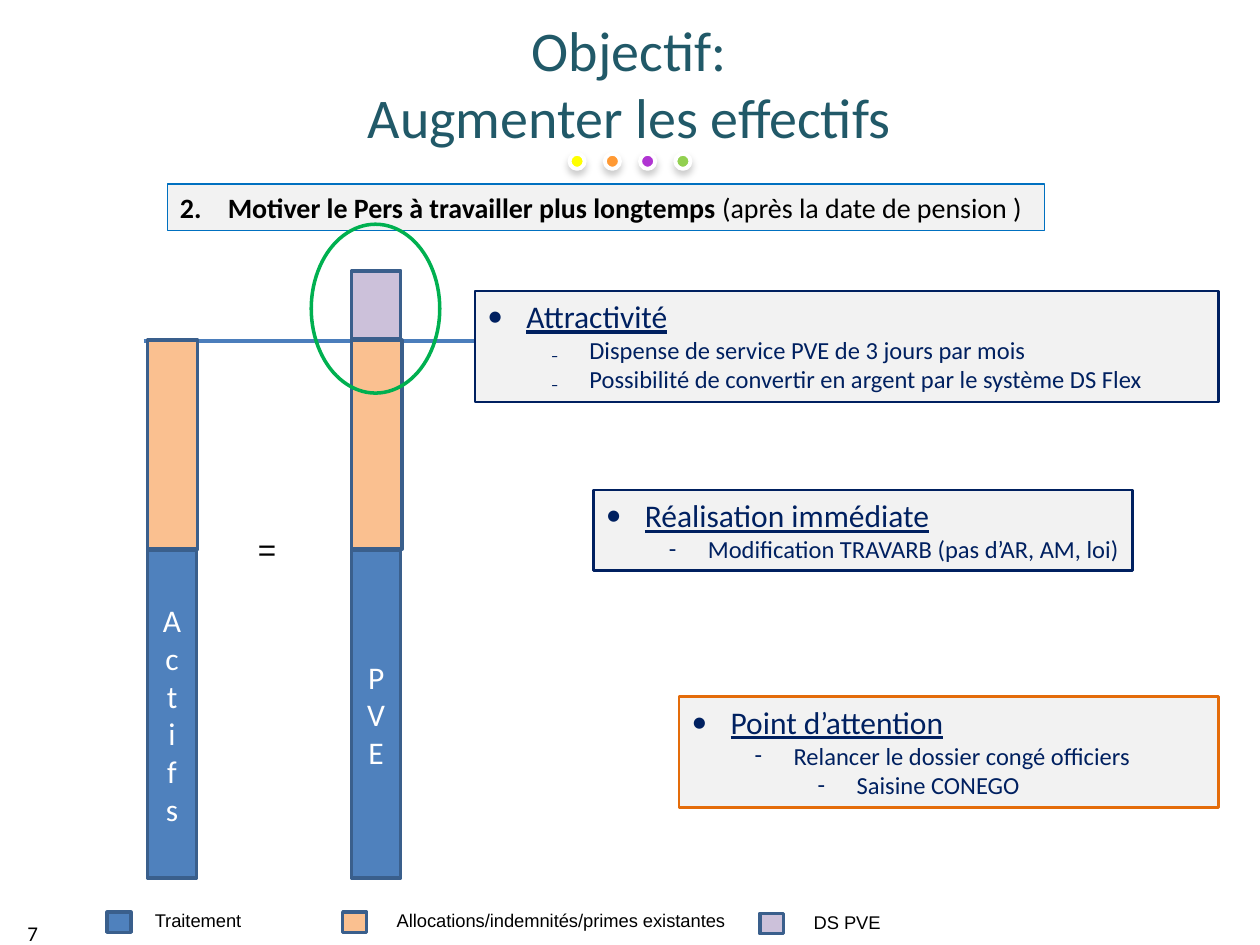
from dataclasses import dataclass

from lxml.etree import SubElement
from pptx import Presentation
from pptx.dml.color import RGBColor as RGB
from pptx.enum.shapes import MSO_CONNECTOR as Link, MSO_SHAPE as Kind
from pptx.enum.text import MSO_ANCHOR as Anchor, PP_ALIGN as Align
from pptx.oxml.ns import qn
from pptx.util import Inches, Pt

BLACK, WHITE = RGB(0, 0, 0), RGB(255, 255, 255)
NAVY, TEAL = RGB(0x00, 0x20, 0x60), RGB(0x21, 0x59, 0x68)
GREY, ORANGE = RGB(0xF2, 0xF2, 0xF2), RGB(0xE4, 0x6C, 0x0A)
BLUE, PEACH, LILAC = RGB(0x4F, 0x81, 0xBD), RGB(0xFA, 0xC0, 0x90), RGB(0xCC, 0xC1, 0xDA)
EDGE, LEVEL = RGB(0x3A, 0x5F, 0x8C), RGB(0x4B, 0x7E, 0xBC)
SKY, GREEN = RGB(0x00, 0x70, 0xC0), RGB(0x00, 0xB0, 0x50)
DOTS = [RGB(255, 255, 0), RGB(0xFF, 0x99, 0x33), RGB(0xB0, 0x34, 0xD2), RGB(0x92, 0xD0, 0x50)]


@dataclass
class Box:
    left: float
    top: float
    width: float
    height: float

    def emu(self) -> list:
        return [Inches(v) for v in (self.left, self.top, self.width, self.height)]


@dataclass
class Item:
    text: str
    mark: str
    level: int = 0


@dataclass
class Note:
    box: Box
    edge: RGB
    items: list[Item]


@dataclass
class Bar:
    left: float
    name: str


@dataclass
class Key:
    left: float
    top: float
    fill: RGB
    text: str
    start: float
    width: float


NOTES = [
    Note(Box(3.77, 2.31, 5.9, 0.88), NAVY, [
        Item("Attractivité", "•"),
        Item("Dispense de service PVE de 3 jours par mois", "₋", 1),
        Item("Possibilité de convertir en argent par le système DS Flex", "₋", 1)]),
    Note(Box(4.71, 3.89, 4.28, 0.64), NAVY, [
        Item("Réalisation immédiate", "•"),
        Item("Modification TRAVARB (pas d’AR, AM, loi)", "-", 1)]),
    Note(Box(5.39, 5.53, 4.28, 0.88), ORANGE, [
        Item("Point d’attention", "•"),
        Item("Relancer le dossier congé officiers", "-", 1),
        Item("Saisine CONEGO", "-", 2)]),
]
BARS = [Bar(1.17, "Ac t i f s"), Bar(2.79, "PVE")]
KEYS = [
    Key(0.85, 7.24, BLUE, "Traitement", 1.13, 0.91),
    Key(2.72, 7.24, PEACH, "Allocations/indemnités/primes existantes", 3.05, 2.86),
    Key(6.03, 7.25, LILAC, "DS PVE", 6.36, 0.74),
]


def style(para, size: float, color: RGB, face="Calibri", align=Align.LEFT) -> None:
    para.alignment = align
    for run in para.runs:
        run.font.size, run.font.name = Pt(size), face
        run.font.color.rgb = color


def bullet(para, left: float, hang: float, tag: str, **attrs: str) -> None:
    props = para._p.get_or_add_pPr()
    props.set("marL", str(Inches(left)))
    props.set("indent", str(-Inches(hang)))
    SubElement(props, qn("a:buFont"), typeface="Calibri")
    SubElement(props, qn(tag), **attrs)


def draw(slide, kind, box: Box, fill: RGB | None, edge: RGB, weight: float = 2):
    shape = slide.shapes.add_shape(kind, *box.emu())
    shape.shadow.inherit = False
    if fill is None:
        shape.fill.background()
    else:
        shape.fill.solid()
        shape.fill.fore_color.rgb = fill
    shape.line.color.rgb, shape.line.width = edge, Pt(weight)
    return shape


def label(slide, box: Box, text: str, size: float, face="Arial", wrap=True):
    frame = slide.shapes.add_textbox(*box.emu()).text_frame
    frame.word_wrap = wrap
    frame.text = text
    style(frame.paragraphs[0], size, BLACK, face)
    return frame


def add_dot(slide, left: float, fill: RGB) -> None:
    dot = draw(slide, Kind.OVAL, Box(left, 1.22, 0.12, 0.12), fill, WHITE, 2.25)
    effects = dot._element.spPr.find(qn("a:effectLst"))
    shade = SubElement(effects, qn("a:outerShdw"), blurRad=str(Pt(4)),
                       dist=str(Pt(3)), dir="5400000", rotWithShape="0")
    color = SubElement(shade, qn("a:srgbClr"), val="000000")
    SubElement(color, qn("a:alpha"), val="20000")


def add_note(slide, note: Note) -> None:
    frame = draw(slide, Kind.RECTANGLE, note.box, GREY, note.edge, 1.5).text_frame
    frame.word_wrap, frame.vertical_anchor = True, Anchor.TOP
    frame.text = "\n".join(item.text for item in note.items)
    for para, item in zip(frame.paragraphs, note.items):
        para.level = item.level
        bullet(para, 0.31 + 0.5 * item.level, 0.31, "a:buChar", char=item.mark)
        style(para, 14 if item.level else 18, NAVY)
        para.runs[0].font.underline = item.level == 0


def add_bar(slide, bar: Bar) -> None:
    """Draw the pay part, named one letter to a line, and the allowances above."""
    base = draw(slide, Kind.RECTANGLE, Box(bar.left, 4.37, 0.39, 2.6), BLUE, EDGE)
    frame = base.text_frame
    frame.word_wrap, frame.vertical_anchor = True, Anchor.MIDDLE
    frame.margin_left = frame.margin_right = Inches(0.11)
    frame.text = bar.name
    style(frame.paragraphs[0], 18, WHITE, align=Align.CENTER)
    draw(slide, Kind.RECTANGLE, Box(bar.left, 2.7, 0.4, 1.66), PEACH, EDGE)


def add_key(slide, key: Key) -> None:
    draw(slide, Kind.RECTANGLE, Box(key.left, key.top, 0.19, 0.16), key.fill, EDGE)
    label(slide, Box(key.start, key.top - 0.07, key.width, 0.28), key.text, 10.5, wrap=False)


def add_title(slide) -> None:
    title = slide.shapes.title
    title.left, title.top, title.width, title.height = Box(1.69, 0.05, 6.61, 1.21).emu()
    title.text_frame.text = "Objectif:\nAugmenter les effectifs"
    title.text_frame.vertical_anchor = Anchor.MIDDLE
    for para in title.text_frame.paragraphs:
        style(para, 32, TEAL, align=Align.CENTER)


def add_head(slide) -> None:
    box = draw(slide, Kind.RECTANGLE, Box(1.33, 1.46, 6.96, 0.37), GREY, SKY, 0.75)
    frame = box.text_frame
    frame.word_wrap, frame.vertical_anchor = False, Anchor.TOP
    para = frame.paragraphs[0]
    bullet(para, 0.38, 0.38, "a:buAutoNum", type="arabicPeriod", startAt="2")
    for text, bold in (("Motiver le Pers à travailler plus longtemps ", True),
                       ("(après la date de pension )", False)):
        run = para.add_run()
        run.text, run.font.bold = text, bold
    style(para, 16, BLACK)


def add_level(slide) -> None:
    line = slide.shapes.add_connector(Link.STRAIGHT, Inches(1.14), Inches(2.71),
                                      Inches(5.08), Inches(2.71))
    line.line.color.rgb, line.line.width = LEVEL, Pt(2.25)
    SubElement(line._element.spPr, qn("a:effectLst"))


def main() -> None:
    deck = Presentation()
    deck.slide_width, deck.slide_height = Inches(10), Inches(7.5)
    slide = deck.slides.add_slide(deck.slide_layouts[5])
    add_title(slide)
    page = label(slide, Box(0.12, 7.21, 2.33, 0.4), "7", 12, "Calibri")
    page.vertical_anchor = Anchor.MIDDLE
    add_level(slide)
    draw(slide, Kind.RECTANGLE, Box(2.79, 2.15, 0.39, 0.54), LILAC, EDGE)
    for note in NOTES:
        add_note(slide, note)
    for i, color in enumerate(DOTS):
        add_dot(slide, 4.52 + 0.28 * i, color)
    add_head(slide)
    for bar in BARS:
        add_bar(slide, bar)
    label(slide, Box(1.88, 4.16, 0.47, 0.4), " =", 18)
    draw(slide, Kind.OVAL, Box(2.47, 1.78, 1.02, 1.34), None, GREEN)
    for key in KEYS:
        add_key(slide, key)
    deck.save("out.pptx")


if __name__ == "__main__":
    main()
